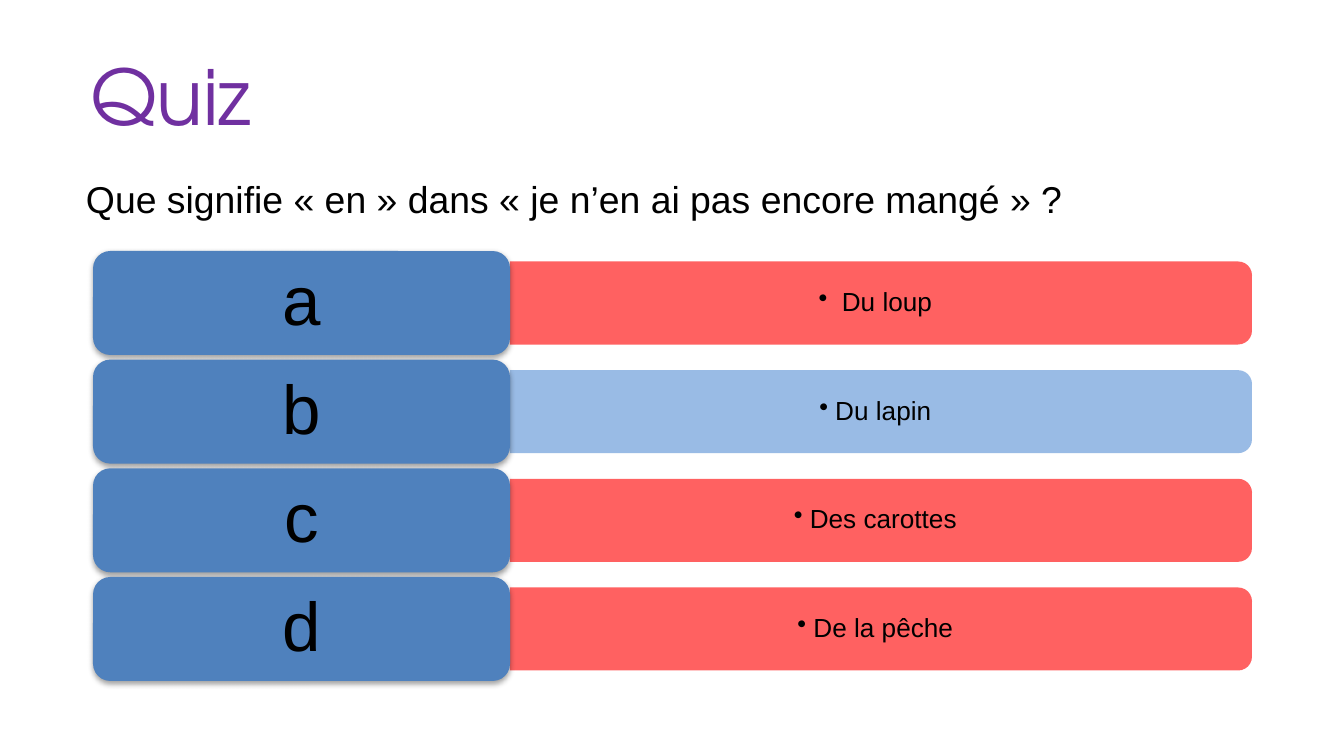
from lxml import etree
from pptx import Presentation
from pptx.dml.color import RGBColor
from pptx.enum.shapes import MSO_SHAPE
from pptx.enum.text import MSO_ANCHOR, MSO_AUTO_SIZE, PP_ALIGN
from pptx.oxml import parse_xml
from pptx.oxml.ns import qn
from pptx.util import Pt

ROUND, ROUND_TOP = MSO_SHAPE.ROUNDED_RECTANGLE, MSO_SHAPE.ROUND_2_SAME_RECTANGLE
MIDDLE, NO_FIT = MSO_ANCHOR.MIDDLE, MSO_AUTO_SIZE.NONE
LEFT, CENTER = PP_ALIGN.LEFT, PP_ALIGN.CENTER

HEADING = "Quiz"
QUESTION = "Que signifie « en » dans « je n’en ai pas encore mangé » ?"
ANSWERS = [
    ("a", " Du loup ", "wrong"),
    ("b", "Du lapin ", "right"),
    ("c", "Des carottes ", "wrong"),
    ("d", "De la pêche ", "wrong"),
]

THEME = {
    "text": "000000", "heading": "7030A0", "letter": "4F81BD",
    "wrong": "FF5050", "right": "8EB4E3", "bar_alpha": 90,
    "font": "Arial", "heading_font": "TeX Gyre Adventor",
    "heading_size": 41, "question_size": 20, "letter_size": 37, "answer_size": 14,
}
SLIDE = (1344, 756)
HEADING_BOX = (90, 22, 1158, 146)
QUESTION_BOX = (86, 167, 1207, 63)
ROWS_TOP, ROWS_BOTTOM = 251, 681
LETTER_LEFT, LETTER_W, LETTER_H = 93, 417, 104
BAR_W, BAR_H = 742, 83
ANSWER_W, ANSWER_H, INDENT = 738, 75, 16
ANSWER_INSETS = (36, 19, 36, 19)

SHADOW = (
    '<a:effectLst xmlns:a="http://schemas.openxmlformats.org/drawingml/2006/main">'
    '<a:outerShdw blurRad="40000" dist="20000" dir="5400000" rotWithShape="0">'
    '<a:srgbClr val="000000"><a:alpha val="38000"/></a:srgbClr>'
    '</a:outerShdw></a:effectLst>'
)


def px(n):
    return round(n * 914400 / 134.4)


def box(*lengths):
    return [px(n) for n in lengths]


def write(sp, text, size, color="text", font="font", align=LEFT, insets=(0, 0, 0, 0)):
    tf = sp.text_frame
    tf.word_wrap = True
    tf.auto_size = NO_FIT
    tf.vertical_anchor = MIDDLE
    tf.margin_left, tf.margin_top, tf.margin_right, tf.margin_bottom = box(*insets)
    p = tf.paragraphs[0]
    p.text = text
    p.alignment = align
    p.font.size = Pt(THEME[size])
    p.font.name = THEME[font]
    p.font.color.rgb = RGBColor.from_string(THEME[color])
    return p


def add_filled(slide, kind, color, *lengths):
    sp = slide.shapes.add_shape(kind, *box(*lengths))
    sp.shadow.inherit = False
    sp.fill.solid()
    sp.fill.fore_color.rgb = RGBColor.from_string(THEME[color])
    sp.line.fill.background()
    return sp


def add_bar(slide, color, left, mid):
    center = left + BAR_W / 2
    sp = add_filled(slide, ROUND_TOP, color,
                    center - BAR_H / 2, mid - BAR_W / 2, BAR_H, BAR_W)
    sp.rotation = 90
    rgb = sp._element.spPr.find(qn("a:solidFill")).find(qn("a:srgbClr"))
    etree.SubElement(rgb, qn("a:alpha")).set("val", str(THEME["bar_alpha"] * 1000))


def add_answer(slide, text, left, mid):
    sp = slide.shapes.add_textbox(*box(left, mid - ANSWER_H / 2, ANSWER_W, ANSWER_H))
    p = write(sp, text, "answer_size", align=CENTER, insets=ANSWER_INSETS)
    p.line_spacing = 0.9
    pPr = p._p.get_or_add_pPr()
    pPr.set("marL", str(px(INDENT)))
    pPr.set("indent", str(-px(INDENT)))
    bullet = etree.Element(qn("a:buChar"), char="•")
    pPr.find(qn("a:defRPr")).addprevious(bullet)


def add_letter(slide, letter, top):
    sp = add_filled(slide, ROUND, "letter", LETTER_LEFT, top, LETTER_W, LETTER_H)
    spPr = sp._element.spPr
    spPr.replace(spPr.find(qn("a:effectLst")), parse_xml(SHADOW))
    write(sp, letter, "letter_size", align=CENTER).line_spacing = 0.9


def main():
    prs = Presentation()
    prs.slide_width, prs.slide_height = box(*SLIDE)
    slide = prs.slides.add_slide(prs.slide_layouts[5])

    title = slide.shapes.title
    title.left, title.top, title.width, title.height = box(*QUESTION_BOX)
    write(title, QUESTION, "question_size")

    pitch = (ROWS_BOTTOM - ROWS_TOP - LETTER_H) / (len(ANSWERS) - 1)
    bar_left = LETTER_LEFT + LETTER_W
    for i, (letter, answer, verdict) in enumerate(ANSWERS):
        top = ROWS_TOP + i * pitch
        mid = top + LETTER_H / 2
        add_bar(slide, verdict, bar_left, mid)
        add_answer(slide, answer, bar_left, mid)
        add_letter(slide, letter, top)

    heading = slide.shapes.add_textbox(*box(*HEADING_BOX))
    write(heading, HEADING, "heading_size", "heading", "heading_font")
    prs.save("out.pptx")


if __name__ == "__main__":
    main()
